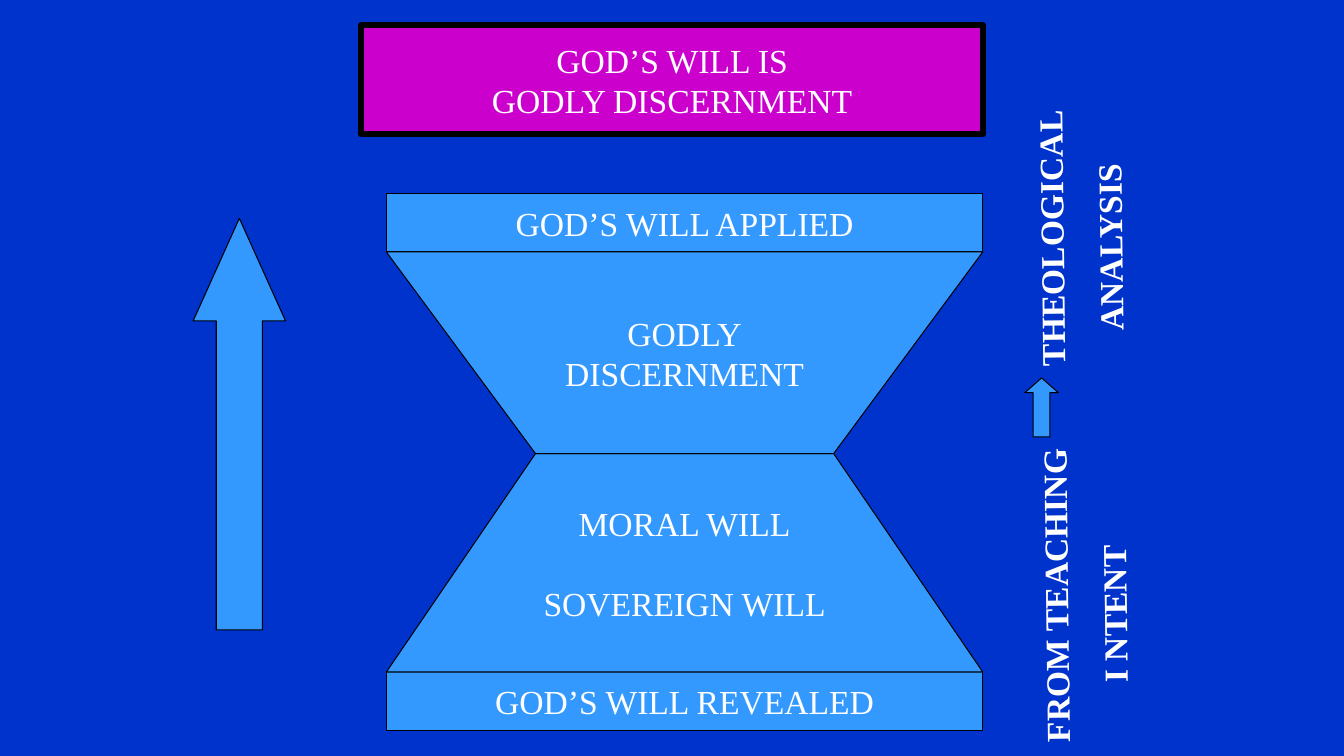
from lxml import etree
from pptx import Presentation
from pptx.dml.color import RGBColor
from pptx.enum.shapes import MSO_SHAPE as Shape
from pptx.enum.text import MSO_ANCHOR as Anchor, PP_ALIGN as Align
from pptx.oxml.ns import qn
from pptx.util import Pt

COLORS = {
    "background": "0033CC",
    "panel": "3399FF",
    "title": "CC00CC",
    "outline": "000000",
    "text": "FFFFFF",
}
FONT = "Times New Roman"
TEXT_SIZE = 24


def color(name):
    """Return the named palette colour."""
    return RGBColor.from_string(COLORS[name])


def style_shape(shape, fill="panel", line_width=0.75):
    """Give a shape a flat fill and a black outline."""
    shape.shadow.inherit = False
    shape.fill.solid()
    shape.fill.fore_color.rgb = color(fill)
    shape.line.color.rgb = color("outline")
    shape.line.width = Pt(line_width)


def write_lines(shape, lines, align=Align.CENTER, bold=False, gap=0):
    """Write one paragraph per line, with a gap between them."""
    frame = shape.text_frame
    frame.text = "\n".join(lines)
    for index, paragraph in enumerate(frame.paragraphs):
        paragraph.alignment = align
        paragraph.space_before = Pt(gap if index else 0)
        for run in paragraph.runs:
            run.font.name = FONT
            run.font.size = Pt(TEXT_SIZE)
            run.font.bold = bold
            run.font.color.rgb = color("text")


def write_centered(shape, lines, gap=0):
    """Write lines in the middle of a shape without wrapping."""
    write_lines(shape, lines, gap=gap)
    shape.text_frame.vertical_anchor = Anchor.MIDDLE
    shape.text_frame.word_wrap = False


def add_preset(slide, kind, left, top, width, height, **style):
    """Add a styled preset shape."""
    shape = slide.shapes.add_shape(kind, Pt(left), Pt(top), Pt(width), Pt(height))
    style_shape(shape, **style)
    return shape


def add_title(slide, left, top, width, height):
    """Add the framed title."""
    title = add_preset(slide, Shape.RECTANGLE, left, top, width, height,
                       fill="title", line_width=4.5)
    write_centered(title, ["GOD’S WILL IS", "GODLY DISCERNMENT"])


def add_funnel(slide, points, lines, gap=0):
    """Add one half of the hourglass from its corner points."""
    corners = [(Pt(x), Pt(y)) for x, y in points]
    builder = slide.shapes.build_freeform(*corners[0], scale=1.0)
    builder.add_line_segments(corners[1:], close=True)
    funnel = builder.convert_to_shape()
    style_shape(funnel)
    write_centered(funnel, lines, gap)


def add_hourglass(slide, left, top, width, height, band=42, upper=144):
    """Add two bands joined by two funnels that meet at a waist."""
    right, bottom = left + width, top + height
    waist = top + band + upper
    waist_left, waist_right = left + width / 4, right - width / 4
    for band_top, label in ((bottom - band, "GOD’S WILL REVEALED"),
                            (top, "GOD’S WILL APPLIED")):
        bar = add_preset(slide, Shape.RECTANGLE, left, band_top, width, band)
        write_centered(bar, [label])
    for edge, lines, gap in (
            (bottom - band, ["MORAL WILL", "SOVEREIGN WILL"], 28),
            (top + band, ["GODLY", "DISCERNMENT"], 0)):
        points = [(left, edge), (waist_left, waist), (waist_right, waist), (right, edge)]
        add_funnel(slide, points, lines, gap)


def add_up_arrow(slide, left, top, width, height, head):
    """Add an upward arrow whose head length is a share of its width."""
    arrow = add_preset(slide, Shape.UP_ARROW, left, top, width, height)
    arrow.adjustments[0] = 0.5
    arrow.adjustments[1] = head


def set_tab_stops(paragraph, stops):
    """Set left tab stops on a paragraph."""
    tab_list = etree.SubElement(paragraph._p.get_or_add_pPr(), qn("a:tabLst"))
    for stop in stops:
        etree.SubElement(tab_list, qn("a:tab"), pos=str(Pt(stop)), algn="l")


def add_side_caption(slide, left, top, width, height):
    """Add the caption that reads upwards beside the hourglass."""
    caption = slide.shapes.add_textbox(Pt(left), Pt(top), Pt(width), Pt(height))
    caption.rotation = 269.3
    caption.text_frame.word_wrap = True
    write_lines(caption, ["FROM TEACHING\tTHEOLOGICAL", "\tI NTENT\tANALYSIS"],
                align=Align.LEFT, bold=True, gap=13)
    for paragraph, stops in zip(caption.text_frame.paragraphs, ([268.5], [42, 293.5])):
        set_tab_stops(paragraph, stops)


def build_slide(presentation):
    """Build the slide on the blank layout."""
    slide = presentation.slides.add_slide(presentation.slide_layouts[6])
    slide.background.fill.solid()
    slide.background.fill.fore_color.rgb = color("background")
    add_hourglass(slide, 276, 138, 426, 384)
    add_up_arrow(slide, 138, 156, 66, 294, head=1.11)
    add_side_caption(slide, 540, 263, 468, 80)
    add_up_arrow(slide, 732, 270, 24, 42, head=0.44)
    add_title(slide, 258, 18, 444, 78)


def main():
    """Create and save the presentation."""
    presentation = Presentation()
    presentation.slide_width = Pt(960)
    presentation.slide_height = Pt(540)
    build_slide(presentation)
    presentation.save("out.pptx")


if __name__ == "__main__":
    main()
